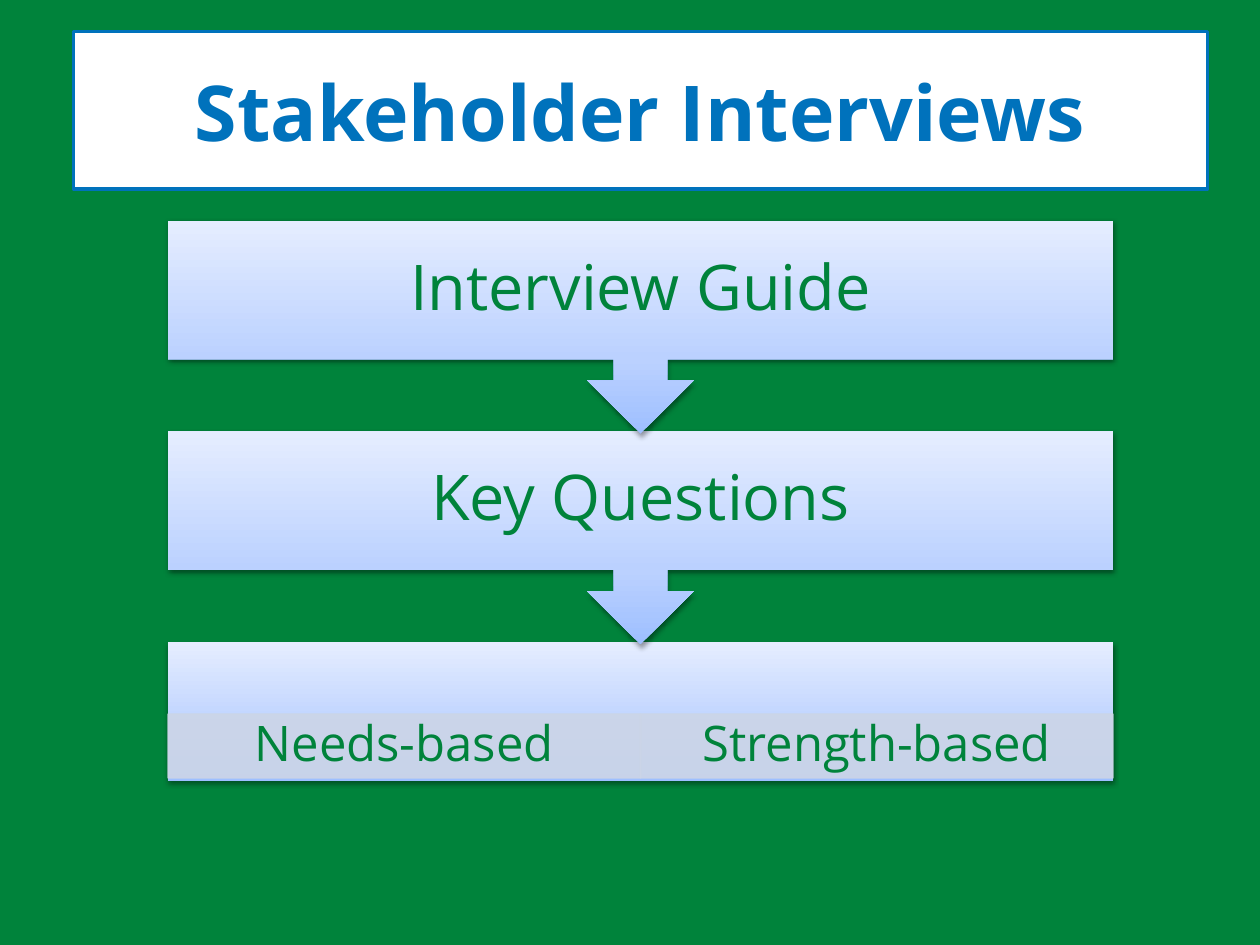
from copy import deepcopy

from lxml.etree import SubElement
from pptx import Presentation
from pptx.dml.color import RGBColor
from pptx.enum.shapes import MSO_SHAPE as Preset
from pptx.enum.text import MSO_ANCHOR as Anchor, PP_ALIGN as Align
from pptx.oxml.ns import qn
from pptx.util import Inches, Pt

GREEN, BLUE, WHITE, PANEL = "00833B", "0072BC", "FFFFFF", "CCD5E7"
GRADIENT = [(0, "9EBFFF"), (0.35, "BBD1FF"), (1, "E5EDFF")]


def color(value):
    return RGBColor.from_string(value)


def set_alpha(color_element, percent):
    SubElement(color_element, qn("a:alpha"), val=str(percent * 1000))


class SlideBuilder:
    """Draws styled elements on a grid of 120 columns by 90 rows."""

    font_name = "Open Sans"
    cell = Inches(10) / 120

    def __init__(self, presentation):
        self.slide = presentation.slides.add_slide(presentation.slide_layouts[6])

    def background(self, value):
        fill = self.slide.background.fill
        fill.solid()
        fill.fore_color.rgb = color(value)

    def shape(self, preset, column, row, columns, rows):
        box = [round(length * self.cell) for length in (column, row, columns, rows)]
        shape = self.slide.shapes.add_shape(preset, *box)
        shape.shadow.inherit = False
        shape.line.fill.background()
        return shape

    def label(self, shape, text, size, value, inset, spacing=1.0, bold=False):
        frame = shape.text_frame
        frame.word_wrap = True
        frame.vertical_anchor = Anchor.MIDDLE
        frame.margin_left = frame.margin_right = Inches(inset[0])
        frame.margin_top = frame.margin_bottom = Inches(inset[1])
        paragraph = frame.paragraphs[0]
        paragraph.text = text
        paragraph.alignment = Align.CENTER
        paragraph.line_spacing = spacing
        font = paragraph.font
        font.name, font.size, font.bold = self.font_name, Pt(size), bold
        font.color.rgb = color(value)

    def solid(self, shape, fill, line, width):
        shape.fill.solid()
        shape.fill.fore_color.rgb = color(fill)
        shape.line.color.rgb = color(line)
        shape.line.width = Pt(width)

    def title(self, text, *box):
        shape = self.shape(Preset.RECTANGLE, *box)
        self.solid(shape, WHITE, BLUE, 2)
        self.label(shape, text, 44, BLUE, (0.1, 0.05), bold=True)

    def step(self, preset, text, *box):
        shape = self.shape(preset, *box)
        shape.fill.gradient()
        shape.fill.gradient_angle = 90
        properties = shape.element.spPr
        stops = properties.find(".//" + qn("a:gsLst"))
        stops.append(deepcopy(stops[0]))
        for stop, (position, value) in zip(shape.fill.gradient_stops, GRADIENT):
            stop.position = position
            stop.color.rgb = color(value)
        shadow = SubElement(
            properties.find(qn("a:effectLst")), qn("a:outerShdw"),
            blurRad=str(Pt(3.1)), dist=str(Pt(1.6)), dir="5400000", rotWithShape="0")
        set_alpha(SubElement(shadow, qn("a:srgbClr"), val="000000"), 38)
        if text:
            self.label(shape, text, 36, GREEN, (0.28, 0.28), spacing=0.9)

    def panel(self, text, *box):
        shape = self.shape(Preset.RECTANGLE, *box)
        self.solid(shape, PANEL, PANEL, 0.75)
        for color_element in shape.element.spPr.iter(qn("a:srgbClr")):
            set_alpha(color_element, 90)
        self.label(shape, text, 28, GREEN, (0.22, 0.04), spacing=0.9)


def main():
    presentation = Presentation()
    presentation.slide_width, presentation.slide_height = Inches(10), Inches(7.5)
    builder = SlideBuilder(presentation)
    builder.background(GREEN)
    builder.title("Stakeholder Interviews", 7, 3, 108, 15)

    left, top, width, pitch = 16, 21, 90, 20.08
    builder.step(Preset.RECTANGLE, "", left, top + 2 * pitch, width, 13.2)
    for index, text in enumerate(["Needs-based", "Strength-based"]):
        builder.panel(text, left + index * width / 2, 68, width / 2, 6.1)
    for index, text in reversed(list(enumerate(["Interview Guide", "Key Questions"]))):
        builder.step(Preset.DOWN_ARROW_CALLOUT, text,
                     left, top + index * pitch, width, 20.3)
    presentation.save("out.pptx")


if __name__ == "__main__":
    main()
